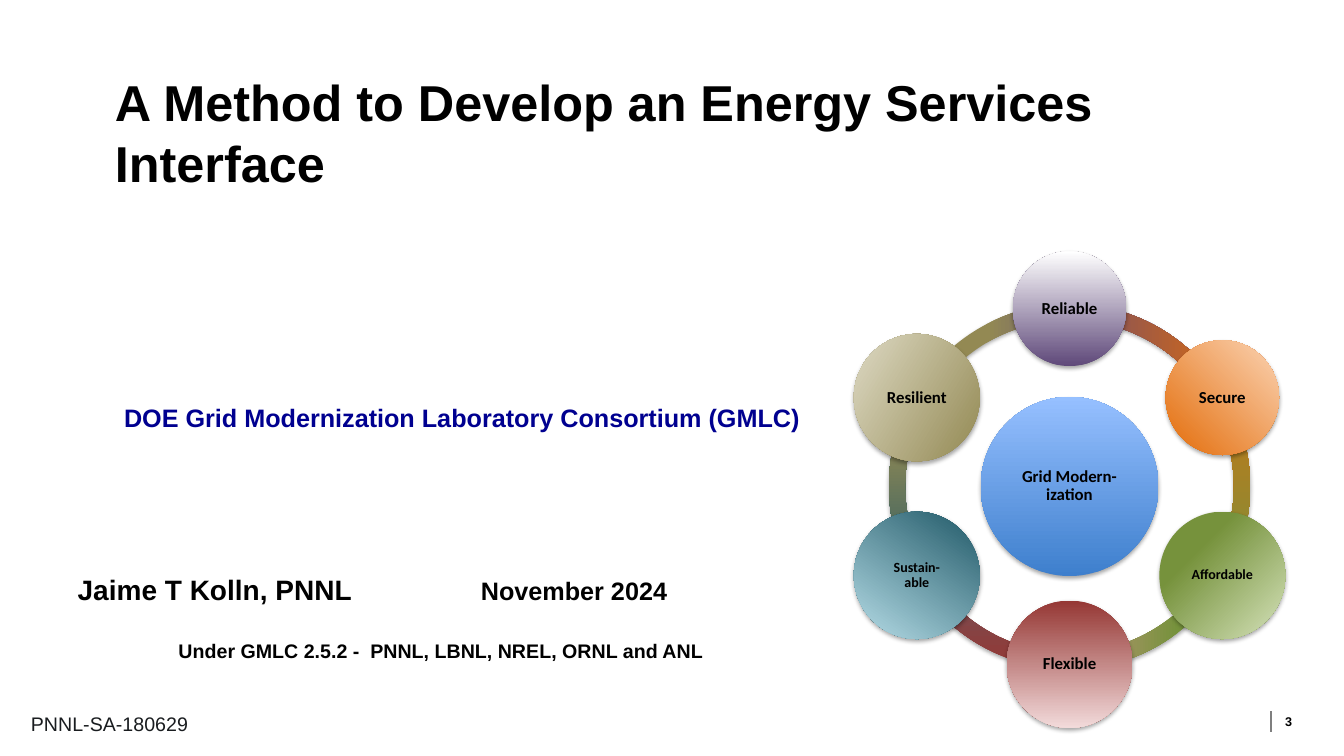
import dataclasses
import math

import lxml.etree
import pptx
import pptx.dml.color
import pptx.enum.shapes
import pptx.enum.text
import pptx.oxml.ns
import pptx.util

Pt = pptx.util.Pt
qn = pptx.oxml.ns.qn
MSO_SHAPE = pptx.enum.shapes.MSO_SHAPE
ANCHOR = pptx.enum.text.MSO_ANCHOR
ALIGN = pptx.enum.text.PP_ALIGN


@dataclasses.dataclass(frozen=True)
class Theme:
    font: str = "Arial"
    wheel_font: str = "Calibri"
    black: str = "000000"
    navy: str = "000090"
    ink: str = "191C1F"
    gray: str = "7F7F7F"
    purple: str = "5F497A"
    orange: str = "E36C09"
    green: str = "76923C"
    red: str = "953734"
    rose: str = "D99593"
    teal: str = "205867"
    aqua: str = "31859B"
    khaki: str = "938953"
    title: int = 36
    author: int = 20
    heading: int = 18
    note: int = 14
    label: int = 12
    small: int = 10
    number: int = 9


T = Theme()

# start angle, end angle, gradient stops, gradient angle
ARCS = [
    (210, 270, [(0, T.khaki), (27, T.khaki), (60, T.purple), (100, T.purple)], 0),
    (150, 210, [(0, T.teal), (20, T.teal), (65, T.khaki), (100, T.khaki)], 270),
    (90, 150, [(0, T.red), (67, T.aqua), (100, T.aqua)], 270),
    (30, 90, [(0, T.green), (20, T.green), (60, T.rose), (100, T.rose)], 180),
    (330, 30, [(0, T.orange), (82, T.green), (100, T.green)], 90),
    (270, 330, [(0, T.purple), (38, T.purple), (100, T.orange)], 0),
]

# label, size, width, height, gradient stops, gradient angle; clockwise from the top
NODES = [
    ("Reliable", T.label, 81, 82, [(0, T.purple), (100, "FFFFFF")], 270),
    ("Secure", T.label, 81, 82, [(0, T.orange), (100, "FBD4B4")], 315),
    ("Affordable", T.small, 90, 91, [(0, T.green), (30, T.green), (100, "D6E3BC")], 45),
    ("Flexible", T.label, 90, 91, [(0, T.red), (100, "F2DADA")], 90),
    ("Sustain-\nable", T.small, 90, 91, [(0, T.teal), (100, "B6DDE7")], 125),
    ("Resilient", T.label, 90, 91, [(0, T.khaki), (100, "DDD9C3")], 211),
]


def style(r, size, color=T.black, bold=True, font=T.font):
    r.font.name = font
    r.font.size = Pt(size)
    r.font.bold = bold
    r.font.color.rgb = pptx.dml.color.RGBColor.from_string(color)


def set_frame(tf, insets, anchor=ANCHOR.TOP, wrap=True):
    tf.auto_size = pptx.enum.text.MSO_AUTO_SIZE.NONE
    tf.word_wrap = wrap
    tf.vertical_anchor = anchor
    tf.margin_left, tf.margin_top, tf.margin_right, tf.margin_bottom = map(Pt, insets)


def add_text(s, box, text, size, insets=(7.2, 3.6, 7.2, 3.6), anchor=ANCHOR.TOP,
             wrap=True, **look):
    tf = s.shapes.add_textbox(*map(Pt, box)).text_frame
    set_frame(tf, insets, anchor, wrap)
    tf.text = text
    style(tf.paragraphs[0].runs[0], size, **look)


def add_glossy(s, preset, box, stops, angle):
    """Add a borderless shape with a linear gradient and a soft shadow below it."""
    sp = s.shapes.add_shape(preset, *map(Pt, box))
    sp.line.fill.background()
    sp.fill.gradient()
    sp.fill.gradient_angle = (360 - angle) % 360
    spPr = sp._element.spPr
    gs_list = spPr.find(qn("a:gradFill")).find(qn("a:gsLst"))
    for gs in list(gs_list):
        gs_list.remove(gs)
    for pos, color in stops:
        gs = lxml.etree.SubElement(gs_list, qn("a:gs"), pos=str(pos * 1000))
        lxml.etree.SubElement(gs, qn("a:srgbClr"), val=color)
    sp.shadow.inherit = False
    shadow = lxml.etree.SubElement(
        spPr.find(qn("a:effectLst")), qn("a:outerShdw"), blurRad=str(Pt(3.1)),
        dist=str(Pt(1.8)), dir=str(90 * 60000), rotWithShape="0")
    clr = lxml.etree.SubElement(shadow, qn("a:srgbClr"), val=T.black)
    lxml.etree.SubElement(clr, qn("a:alpha"), val="34000")
    return sp


def add_disc(s, cx, cy, label, size, w, h, stops, angle):
    sp = add_glossy(s, MSO_SHAPE.OVAL, (cx - w / 2, cy - h / 2, w, h), stops, angle)
    tf = sp.text_frame
    set_frame(tf, (1.5, 1.5, 1.5, 1.5), ANCHOR.MIDDLE)
    tf.text = label
    for p in tf.paragraphs:
        p.alignment = ALIGN.CENTER
        p.line_spacing = 0.9
        style(p.runs[0], size, font=T.wheel_font)


def add_wheel(s, box):
    """Draw the ring in the box, with the hub inside and the nodes around it."""
    x, y, w, h = box
    cx, cy = x + w / 2, y + h / 2
    for start, end, stops, angle in ARCS:
        arc = add_glossy(s, MSO_SHAPE.BLOCK_ARC, box, stops, angle)
        # angles are held in 60000ths of a degree, adjustments in 100000ths
        arc.adjustments[0] = start * 0.6
        arc.adjustments[1] = end * 0.6
        arc.adjustments[2] = 0.045
    add_disc(s, cx, cy, "Grid Modern-\nization", T.label, 127, 128,
             [(0, "3E7FCD"), (100, "96C0FF")], 270)
    for i, node in enumerate(NODES):
        turn = math.radians(i * 360 / len(NODES))
        add_disc(s, cx + 126 * math.sin(turn), cy - 127 * math.cos(turn), *node)


def set_title(s, box, text):
    title = s.shapes.title
    title.left, title.top, title.width, title.height = map(Pt, box)
    tf = title.text_frame
    set_frame(tf, (21.6,) * 4, ANCHOR.BOTTOM)
    tf.text = text
    tf.paragraphs[0].alignment = ALIGN.LEFT
    style(tf.paragraphs[0].runs[0], T.title)


def add_credits(s, box):
    tf = s.shapes.add_textbox(*map(Pt, box)).text_frame
    set_frame(tf, (0, 0, 0, 0))
    author, labs = tf.paragraphs[0], tf.add_paragraph()
    author.text = "Jaime T Kolln, PNNL\t\t"
    author.add_run().text = "November 2024"
    labs.text = "\tUnder GMLC 2.5.2 -  PNNL, LBNL, NREL, ORNL and ANL"
    labs.space_before = Pt(23.5)
    for p in tf.paragraphs:
        tabs = lxml.etree.SubElement(p._p.get_or_add_pPr(), qn("a:tabLst"))
        for inch in range(1, 5):
            lxml.etree.SubElement(tabs, qn("a:tab"), pos=str(Pt(72 * inch)), algn="l")
    for r, size in zip(author.runs + labs.runs, (T.author, T.heading, T.note)):
        style(r, size)


def add_footer(s, box):
    x, y, w, h = box
    add_text(s, (x, y + 4, 127, 24.5), "PNNL-SA-180629", T.note, wrap=False,
             color=T.ink, bold=False)
    right = x + w
    rule = s.shapes.add_connector(pptx.enum.shapes.MSO_CONNECTOR.STRAIGHT, *map(
        Pt, (right - 34, y + 7.2, right - 34, y + 21.6)))
    rule.line.width = Pt(1)
    rule.line.color.rgb = pptx.dml.color.RGBColor.from_string(T.gray)
    lxml.etree.SubElement(rule._element.spPr, qn("a:effectLst"))
    add_text(s, (right - 24, y, 24, h), "3", T.number, (0, 0, 7.2, 0), ANCHOR.MIDDLE)


def main():
    prs = pptx.Presentation()
    prs.slide_width, prs.slide_height = Pt(960), Pt(540)
    s = prs.slides.add_slide(prs.slide_layouts[5])
    set_title(s, (60.5, 30, 800.5, 129), "A Method to Develop an Energy Services Interface")
    add_credits(s, (55.5, 409, 525.5, 67.5))
    add_text(s, (81.5, 283.5, 499.5, 28),
             "DOE Grid Modernization Laboratory Consortium (GMLC)", T.heading, color=T.navy)
    add_wheel(s, (635, 217, 258, 261))
    add_footer(s, (15, 501, 927, 29))
    prs.save("out.pptx")


if __name__ == "__main__":
    main()
